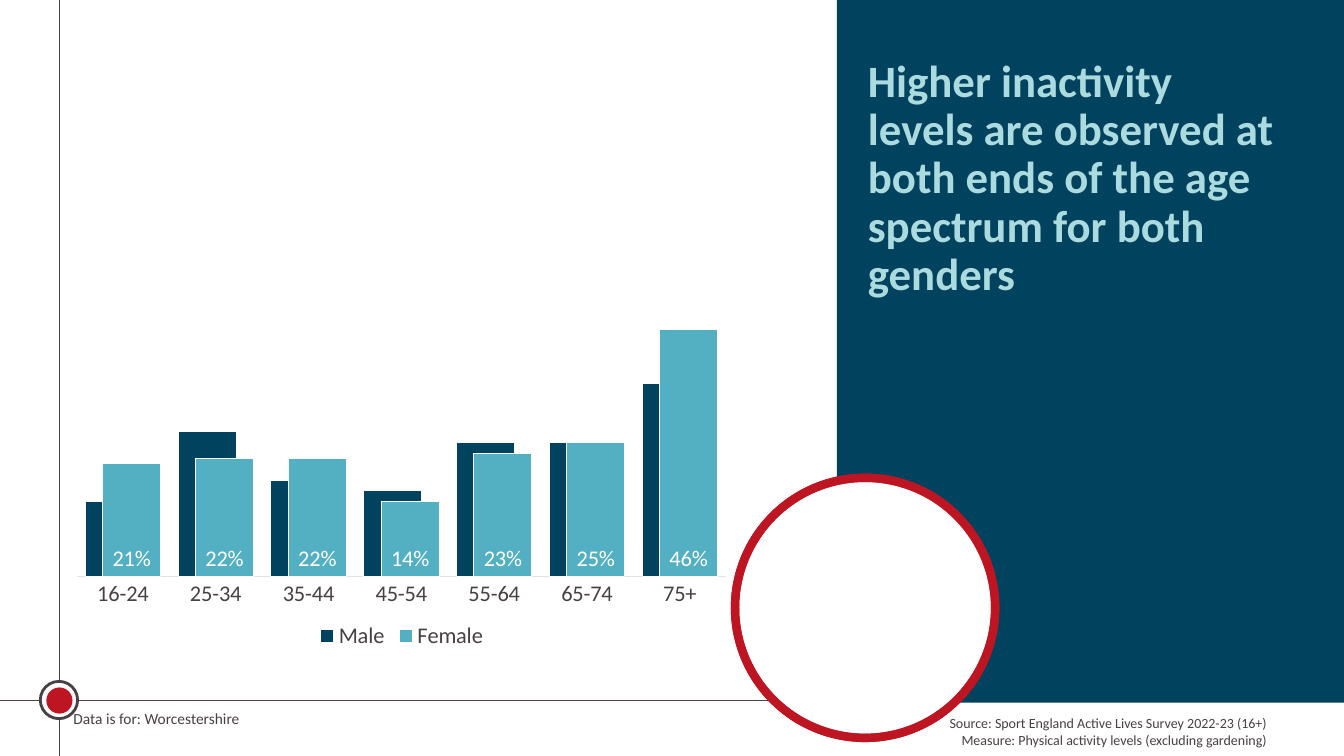
import lxml.etree
import pptx
import pptx.chart.data
import pptx.dml.color
import pptx.enum.chart
import pptx.enum.shapes
import pptx.enum.text
import pptx.oxml
import pptx.oxml.ns
import pptx.util
from pptx.util import Inches

FONT = "Calibri"
INK = "484043"
NAVY = "01425F"
TEAL = "53B0C2"
PALE_TEAL = "ACDBDF"
RED = "BD1622"
WHITE = "FFFFFF"
AXIS_GREY = "E5E1E3"

AGE_GROUPS = ["16-24", "25-34", "35-44", "45-54", "55-64", "65-74", "75+"]
INACTIVITY = {
    "Male": (NAVY, [0.14, 0.27, 0.18, 0.16, 0.25, 0.25, 0.36]),
    "Female": (TEAL, [0.21, 0.22, 0.22, 0.14, 0.23, 0.25, 0.46]),
}


def rgb(hex_colour):
    return pptx.dml.color.RGBColor.from_string(hex_colour)


def style_font(font, size, colour, bold=False):
    font.name = FONT
    font.size = pptx.util.Pt(size)
    font.bold = bold
    font.color.rgb = rgb(colour)


def style_line(line, colour, width):
    line.color.rgb = rgb(colour)
    line.width = pptx.util.Pt(width)


def add_rule(slide, start, end):
    rule = slide.shapes.add_connector(
        pptx.enum.shapes.MSO_CONNECTOR.STRAIGHT,
        *(Inches(length) for length in start + end))
    style_line(rule.line, INK, 0.5)
    lxml.etree.SubElement(rule.line._get_or_add_ln().getparent(),
                          pptx.oxml.ns.qn("a:effectLst"))


def add_filled(slide, kind, box, fill, outline=None, opacity=None):
    """Add a preset shape; outline is (colour, points), opacity a percentage."""
    shape = slide.shapes.add_shape(kind, *(Inches(length) for length in box))
    shape.shadow.inherit = False
    shape.fill.solid()
    shape.fill.fore_color.rgb = rgb(fill)
    if opacity is not None:
        colour = next(shape.element.spPr.iter(pptx.oxml.ns.qn("a:srgbClr")))
        alpha = lxml.etree.SubElement(colour, pptx.oxml.ns.qn("a:alpha"))
        alpha.set("val", str(opacity * 1000))
    if outline:
        style_line(shape.line, *outline)
    else:
        shape.line.fill.background()


def add_text(slide, box, lines, size, colour=INK, bold=False,
             align=pptx.enum.text.PP_ALIGN.LEFT, spacing=None):
    frame = slide.shapes.add_textbox(
        *(Inches(length) for length in box)).text_frame
    frame.word_wrap = True
    frame.text = "\n".join(lines)
    for paragraph in frame.paragraphs:
        paragraph.alignment = align
        paragraph.line_spacing = spacing
        for run in paragraph.runs:
            style_font(run.font, size, colour, bold)


def set_plot_layout(chart, x, y, width, height):
    """Fix the inner plot area, in fractions of the chart."""
    plot_area = chart.plots[0]._element.getparent()
    for old_layout in plot_area.findall(pptx.oxml.ns.qn("c:layout")):
        plot_area.remove(old_layout)
    plot_area.insert(0, pptx.oxml.parse_xml(
        f'<c:layout {pptx.oxml.ns.nsdecls("c")}><c:manualLayout>'
        '<c:layoutTarget val="inner"/>'
        '<c:xMode val="edge"/><c:yMode val="edge"/>'
        f'<c:x val="{x}"/><c:y val="{y}"/>'
        f'<c:w val="{width}"/><c:h val="{height}"/>'
        '</c:manualLayout></c:layout>'))


def add_inactivity_chart(slide, box):
    chart_data = pptx.chart.data.CategoryChartData(number_format="0%")
    chart_data.categories = AGE_GROUPS
    for gender, (_, shares) in INACTIVITY.items():
        chart_data.add_series(gender, shares)
    chart = slide.shapes.add_chart(
        pptx.enum.chart.XL_CHART_TYPE.COLUMN_CLUSTERED,
        *(Inches(length) for length in box), chart_data).chart
    style_font(chart.font, 16, INK)
    chart.has_title = False
    chart.has_legend = True
    chart.legend.position = pptx.enum.chart.XL_LEGEND_POSITION.BOTTOM
    chart.legend.include_in_layout = False
    style_font(chart.legend.font, 16, INK)

    ages = chart.category_axis
    ages.major_tick_mark = pptx.enum.chart.XL_TICK_MARK.NONE
    style_font(ages.tick_labels.font, 16, INK)
    style_line(ages.format.line, AXIS_GREY, 0.75)
    shares_axis = chart.value_axis
    shares_axis.minimum_scale = 0
    shares_axis.maximum_scale = 0.7
    shares_axis.has_major_gridlines = False
    shares_axis.visible = False

    columns = chart.plots[0]
    columns.vary_by_categories = False
    columns.gap_width = 30
    columns.overlap = 70
    for series, (colour, _) in zip(columns.series, INACTIVITY.values()):
        series.format.fill.solid()
        series.format.fill.fore_color.rgb = rgb(colour)
        style_line(series.format.line, WHITE, 0.75)
    female_labels = columns.series[1].data_labels
    female_labels.show_value = True
    female_labels.number_format = "0%"
    female_labels.number_format_is_linked = False
    female_labels.position = pptx.enum.chart.XL_LABEL_POSITION.INSIDE_BASE
    style_font(female_labels.font, 16, WHITE)
    set_plot_layout(chart, 0.012, 0.03, 0.975, 0.805)


def main():
    deck = pptx.Presentation()
    deck.slide_width = Inches(13.33)
    deck.slide_height = Inches(7.5)
    slide = deck.slides.add_slide(deck.slide_layouts[6])
    oval = pptx.enum.shapes.MSO_SHAPE.OVAL
    rectangle = pptx.enum.shapes.MSO_SHAPE.RECTANGLE

    add_text(slide, (0.63, 6.99, 3.63, 0.29),
             ["Data is for: Worcestershire"], 11)
    add_rule(slide, (0.59, 0), (0.59, 7.5))
    add_rule(slide, (13.33, 6.95), (0, 6.95))
    add_filled(slide, oval, (0.4, 6.76, 0.37, 0.37), WHITE, (INK, 2))
    add_filled(slide, oval, (0.46, 6.82, 0.26, 0.26), RED)
    add_filled(slide, rectangle, (8.3, 0, 5.04, 6.97), NAVY)
    for opacity in (None, 20):
        add_filled(slide, oval, (7.29, 4.74, 2.58, 2.58), WHITE, (RED, 6),
                   opacity)
    add_text(slide, (6.19, 7.04, 6.47, 0.44),
             ["Source: Sport England Active Lives Survey 2022-23 (16+)",
              "Measure: Physical activity levels (excluding gardening)"],
             10, align=pptx.enum.text.PP_ALIGN.RIGHT)
    add_text(slide, (8.51, 0.53, 4.36, 2.52),
             ["Higher inactivity levels are observed at both ends of the age "
              "spectrum for both genders"],
             32, PALE_TEAL, bold=True, spacing=0.9)
    add_inactivity_chart(slide, (0.68, 1.85, 6.61, 4.64))
    deck.save("out.pptx")


if __name__ == "__main__":
    main()
